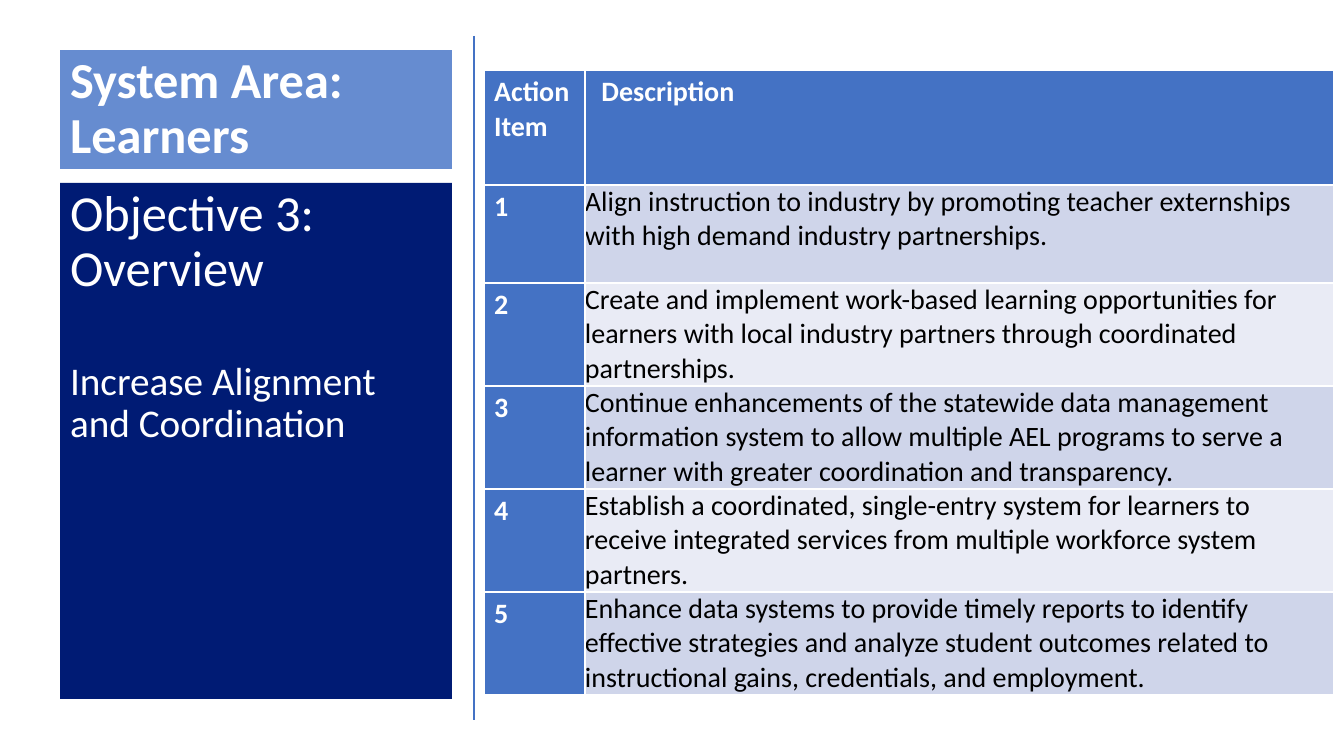
from lxml.etree import SubElement
from pptx import Presentation
from pptx.dml.color import RGBColor
from pptx.enum.shapes import MSO_CONNECTOR
from pptx.enum.text import MSO_ANCHOR, MSO_AUTO_SIZE, PP_ALIGN
from pptx.oxml.ns import qn
from pptx.util import Pt

PX = 9071
COLORS = {
    "white": "FFFFFF",
    "black": "000000",
    "title": "668CD0",
    "navy": "001B74",
    "blue": "4472C4",
    "odd band": "CFD5EA",
    "even band": "E9EBF5",
}


def color(name):
    return RGBColor.from_string(COLORS[name])


def write(paragraph, text, size=20, fill="white", bold=False, spacing=None, before=0):
    paragraph.alignment = PP_ALIGN.LEFT
    paragraph.space_before = Pt(before)
    if spacing:
        paragraph.line_spacing = spacing
    run = paragraph.add_run()
    run.text = text
    run.font.name = "Calibri"
    run.font.size = Pt(size)
    run.font.bold = bold
    run.font.color.rgb = color(fill)


presentation = Presentation()
presentation.slide_width = 1344 * PX
presentation.slide_height = 756 * PX
slide = presentation.slides.add_slide(presentation.slide_layouts[1])

title = slide.shapes.title
body = slide.placeholders[1]
for panel, top, height, fill, anchor in [
    (title, 50, 119, "title", MSO_ANCHOR.MIDDLE),
    (body, 183, 516, "navy", MSO_ANCHOR.TOP),
]:
    panel.left, panel.top = 60 * PX, top * PX
    panel.width, panel.height = 392 * PX, height * PX
    panel.fill.solid()
    panel.fill.fore_color.rgb = color(fill)
    panel.text_frame.auto_size = MSO_AUTO_SIZE.NONE
    panel.text_frame.vertical_anchor = anchor

write(title.text_frame.paragraphs[0], "System Area: Learners", size=36, bold=True, spacing=0.9)

objective = body.text_frame.paragraphs[0]
summary = body.text_frame.add_paragraph()
write(objective, "Objective 3: Overview", size=36, spacing=0.9, before=10)
write(summary, "Increase Alignment and Coordination", size=28, spacing=0.9, before=46)
for paragraph in (objective, summary):
    properties = paragraph._p.get_or_add_pPr()
    properties.set("marL", "0")
    properties.set("indent", "0")
    SubElement(properties, qn("a:buNone"))

divider = slide.shapes.add_connector(MSO_CONNECTOR.STRAIGHT, 474 * PX, 36 * PX, 474 * PX, 720 * PX)
divider.line.color.rgb = color("blue")
divider.line.width = Pt(1.5)
SubElement(divider._element.spPr, qn("a:effectLst"))

actions = [
    "Align instruction to industry by promoting teacher externships with high demand industry partnerships.",
    "Create and implement work-based learning opportunities for learners with local industry partners "
    "through coordinated partnerships.",
    "Continue enhancements of the statewide data management information system to allow multiple AEL "
    "programs to serve a learner with greater coordination and transparency.",
    "Establish a coordinated, single-entry system for learners to receive integrated services from "
    "multiple workforce system partners.",
    "Enhance data systems to provide timely reports to identify effective strategies and analyze student "
    "outcomes related to instructional gains, credentials, and employment.",
]
rows = [("Action Item", " Description")]
rows += [(str(number), action) for number, action in enumerate(actions, 1)]
row_heights = [115, 98] + [103] * 4

table = slide.shapes.add_table(len(rows), 2, 484 * PX, 70 * PX, 850 * PX, sum(row_heights) * PX).table
table.first_col = True
table.columns[0].width = 101 * PX
table.columns[1].width = 749 * PX

for row_index, (row, height) in enumerate(zip(rows, row_heights)):
    table.rows[row_index].height = height * PX
    for column_index, text in enumerate(row):
        cell = table.cell(row_index, column_index)
        heading = row_index == 0 or column_index == 0
        band = "odd band" if row_index % 2 else "even band"
        cell.fill.solid()
        cell.fill.fore_color.rgb = color("blue" if heading else band)
        if not heading:
            cell.margin_left = cell.margin_right = cell.margin_top = cell.margin_bottom = 0
        write(cell.text_frame.paragraphs[0], text, fill="white" if heading else "black", bold=heading)

presentation.save("out.pptx")
